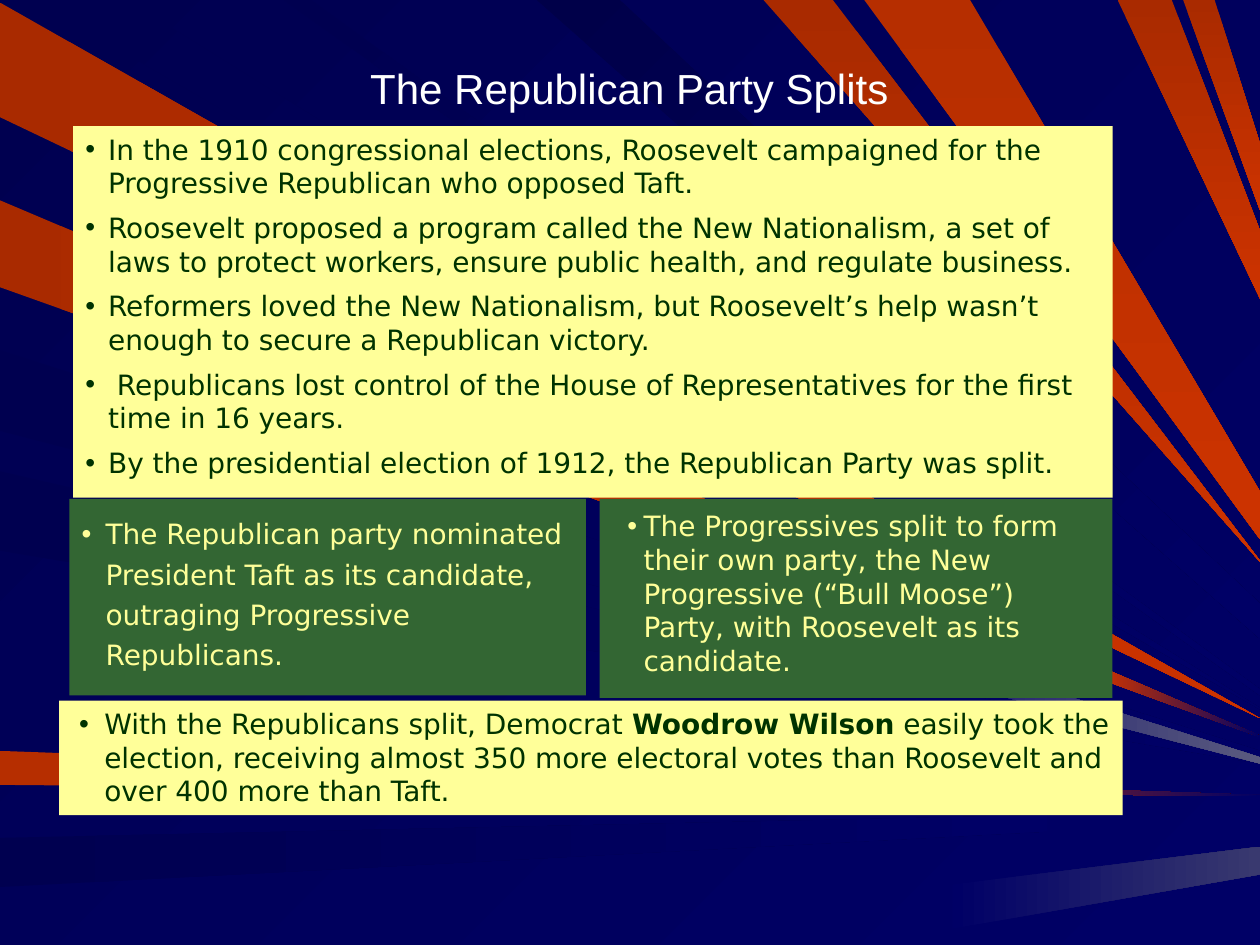
from lxml import etree
from pptx import Presentation
from pptx.dml.color import RGBColor
from pptx.enum.shapes import MSO_SHAPE
from pptx.enum.text import MSO_ANCHOR, PP_ALIGN
from pptx.oxml.ns import qn
from pptx.util import Pt

PX = 9144
WIDTH, HEIGHT = 1000, 750
RECTANGLE = MSO_SHAPE.RECTANGLE
MIDDLE, TOP = MSO_ANCHOR.MIDDLE, MSO_ANCHOR.TOP
CENTER, LEFT = PP_ALIGN.CENTER, PP_ALIGN.LEFT
TITLE_FONT, BODY_FONT = "Arial", "DejaVu Sans"
TITLE_ONLY = 5

COLORS = {
    "white": "FFFFFF", "cream": "FFFF99", "green": "336633", "forest": "003300",
    "navy": "000066", "midnight": "000050", "ink": "000049", "slate": "39396F",
    "haze": "5A5A7F", "red": "CC3300", "rust": "A92A00", "brick": "B62E00",
}

SIDE_RAYS = [
    ("rust", "red", (0, 2, 93), (1000, 570, 570)),
    ("brick", "red", (0, 596, 623), (701, 621, 629)),
    ("red", "navy", (701, 621, 629), (1000, 631, 632)),
    ("midnight", "navy", (0, 665, 704), (831, 647, 660)),
    ("navy", "slate", (756, 702, 737), (1000, 672, 694)),
    ("rust", "red", (0, 159, 228), (873, 529, 539)),
    ("red", "navy", (873, 529, 539), (1000, 584, 585)),
    ("midnight", "navy", (0, 278, 342), (1000, 596, 602)),
    ("midnight", "navy", (0, 374, 437), (1000, 605, 606)),
    ("navy", "haze", (635, 485, 511), (1000, 601, 606)),
]
TOP_RAYS = [
    ("midnight", "navy", (26, 101), (563, 562)),
    ("ink", "navy", (426, 492), (507, 479)),
    ("rust", "red", (606, 661), (446, 445)),
    ("rust", "red", (887, 930), (237, 183)),
    ("rust", "red", (939, 964), (167, 114)),
    ("midnight", "navy", (225, 247), (552, 547)),
    ("brick", "red", (686, 770), (428, 390)),
]

PROGRESSIVES = [
    [("The Progressives split to form their own party, the New Progressive "
      "(“Bull Moose”) Party, with Roosevelt as its candidate.", False)],
]
BACKGROUND = [
    [("In the 1910 congressional elections, Roosevelt campaigned for the "
      "Progressive Republican who opposed Taft.", False)],
    [("Roosevelt proposed a program called the New Nationalism, a set of laws to "
      "protect workers, ensure public health, and regulate business.", False)],
    [("Reformers loved the New Nationalism, but Roosevelt’s help wasn’t enough to "
      "secure a Republican victory.", False)],
    [(" Republicans lost control of the House of Representatives for the first "
      "time in 16 years.", False)],
    [("By the presidential election of 1912, the Republican Party was split.", False)],
]
REPUBLICANS = [
    [("The Republican party nominated President Taft as its candidate, outraging "
      "Progressive Republicans.", False)],
]
RESULT = [
    [("With the Republicans split, Democrat ", False), ("Woodrow Wilson", True),
     (" easily took the election, receiving almost 350 more electoral votes than "
      "Roosevelt and over 400 more than Taft.", False)],
]


def rgb(name):
    """Return the named colour."""
    return RGBColor.from_string(COLORS[name])


def paint(fill, start, end, angle):
    """Fill with one colour, or with a gradient turned clockwise by angle."""
    if start == end:
        fill.solid()
        fill.fore_color.rgb = rgb(start)
        return
    fill.gradient()
    fill.gradient_angle = -angle % 360
    for stop, name in zip(fill.gradient_stops, (start, end)):
        stop.color.rgb = rgb(name)


def add_ray(group, points, start, end, angle):
    """Draw one ray as a closed outline."""
    builder = group.shapes.build_freeform(*points[0], scale=PX)
    builder.add_line_segments(points[1:], close=True)
    sp = builder.convert_to_shape()
    paint(sp.fill, start, end, angle)
    sp.line.fill.background()
    sp.shadow.inherit = False


def add_rays(slide):
    """Draw the rays from the left and from the top edge as one group."""
    group = slide.shapes.add_group_shape()
    for start, end, (x1, a, b), (x2, c, d) in SIDE_RAYS:
        add_ray(group, [(x1, a), (x1, b), (x2, d), (x2, c)], start, end, 0)
    for start, end, (a, b), (c, d) in TOP_RAYS:
        points = [(a, 0), (b, 0), (WIDTH, d), (WIDTH, c)]
        add_ray(group, points, start, end, 90 if end == "red" else 45)


def add_run(p, text, font, size, color, bold=False):
    """Append one formatted run."""
    r = p.add_run()
    r.text = text
    r.font.name, r.font.size, r.font.bold = font, Pt(size), bold
    r.font.color.rgb = rgb(color)


def set_title(slide, text, box):
    """Place the title in front of the rays and format it."""
    sp = slide.shapes.title
    slide.shapes._spTree.append(sp._element)
    sp.left, sp.top, sp.width, sp.height = (v * PX for v in box)
    tf = sp.text_frame
    tf.vertical_anchor, tf.margin_bottom = MIDDLE, 11 * PX
    p = tf.paragraphs[0]
    p.alignment = CENTER
    add_run(p, text, TITLE_FONT, 24, "white")


def add_panel(slide, box, color):
    """Add a plain coloured rectangle."""
    sp = slide.shapes.add_shape(RECTANGLE, *(v * PX for v in box))
    paint(sp.fill, color, color, 0)
    sp.line.fill.background()
    sp.shadow.inherit = False


def set_bullet(p, indent, hang):
    """Give a paragraph a round bullet and a hanging indent."""
    pPr = p._p.get_or_add_pPr()
    pPr.set("marL", str(indent * PX))
    pPr.set("indent", str(-hang * PX))
    etree.SubElement(pPr, qn("a:buFont"), typeface="Arial")
    etree.SubElement(pPr, qn("a:buChar"), char="•")


def add_bullets(slide, box, paragraphs, color, indent, hang, spacing=1.0):
    """Add a text box with bulleted paragraphs."""
    tf = slide.shapes.add_textbox(*(v * PX for v in box)).text_frame
    tf.word_wrap, tf.vertical_anchor = True, TOP
    for i, runs in enumerate(paragraphs):
        p = tf.add_paragraph() if i else tf.paragraphs[0]
        set_bullet(p, indent, hang)
        p.alignment, p.line_spacing = LEFT, spacing
        p.space_before = Pt(6.4 if i else 0)
        for text, bold in runs:
            add_run(p, text, BODY_FONT, 16, color, bold)


def main():
    """Build the slide and save it."""
    prs = Presentation()
    prs.slide_width, prs.slide_height = WIDTH * PX, HEIGHT * PX
    slide = prs.slides.add_slide(prs.slide_layouts[TITLE_ONLY])
    paint(slide.background.fill, "midnight", "navy", 45)
    add_rays(slide)
    set_title(slide, "The Republican Party Splits", (58, 42, 883, 61))
    add_panel(slide, (476, 396, 407, 158), "green")
    add_bullets(slide, (488, 399, 368, 145), PROGRESSIVES, "cream", 13, 13)
    add_panel(slide, (58, 100, 825, 295), "cream")
    add_bullets(slide, (58, 100, 825, 294), BACKGROUND, "forest", 18, 18)
    add_panel(slide, (55, 396, 410, 156), "green")
    add_bullets(slide, (55, 400, 408, 140), REPUBLICANS, "cream", 19, 19, 1.2)
    add_panel(slide, (47, 556, 844, 91), "cream")
    add_bullets(slide, (47, 556, 844, 90), RESULT, "forest", 26, 20)
    prs.save("out.pptx")


if __name__ == "__main__":
    main()
